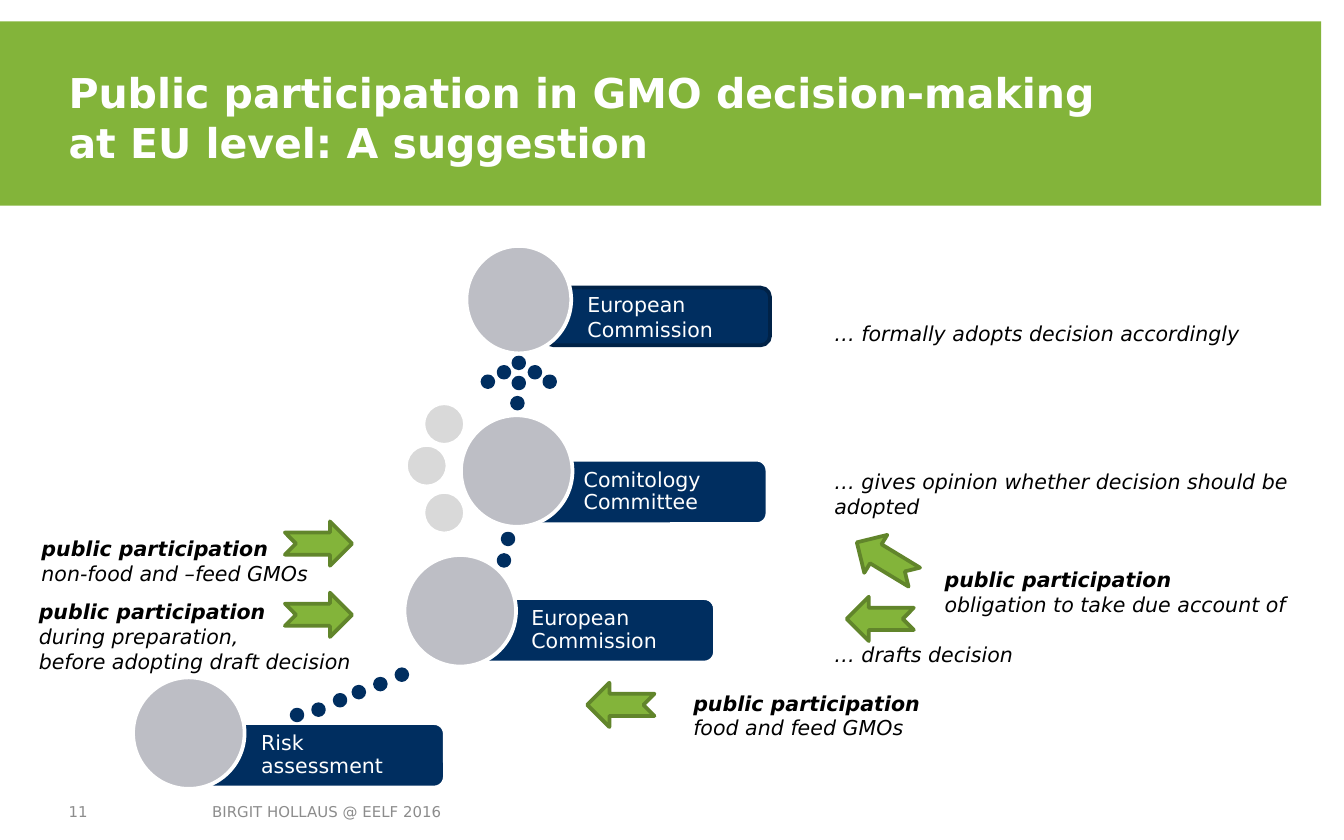
from copy import deepcopy
from dataclasses import dataclass

from pptx import Presentation
from pptx.dml.color import RGBColor
from pptx.enum.shapes import MSO_SHAPE
from pptx.enum.text import MSO_ANCHOR, MSO_AUTO_SIZE, PP_ALIGN
from pptx.oxml.ns import qn
from pptx.util import Pt

PX = 9144
TITLE_ONLY = 5
RECT = MSO_SHAPE.RECTANGLE
ROUND = MSO_SHAPE.ROUNDED_RECTANGLE
OVAL = MSO_SHAPE.OVAL
ARROW = MSO_SHAPE.NOTCHED_RIGHT_ARROW
TOP, MIDDLE = MSO_ANCHOR.TOP, MSO_ANCHOR.MIDDLE
LEFT = PP_ALIGN.LEFT
NO_FIT = MSO_AUTO_SIZE.NONE


@dataclass(frozen=True)
class Theme:
    font: str = "DejaVu Sans"
    green: str = "83B43A"
    dark_green: str = "61852B"
    navy: str = "002E60"
    dark_navy: str = "002247"
    grey: str = "BDBEC5"
    light: str = "D9D9D9"
    muted: str = "8C8C8C"
    white: str = "FFFFFF"
    black: str = "000000"
    title: int = 22
    body: int = 11
    small: int = 8
    line: int = 2


def rgb(value):
    return RGBColor.from_string(value)


def write(tf, lines, *, size, color, font, bold=False, first_bold=False, italic=False,
          anchor=TOP, insets=(10, 5, 10, 5), spacing=None):
    tf.word_wrap = True
    tf.auto_size = NO_FIT
    tf.vertical_anchor = anchor
    tf.margin_left, tf.margin_top, tf.margin_right, tf.margin_bottom = (v * PX for v in insets)
    p = tf.paragraphs[0]
    p.alignment = LEFT
    p.line_spacing = spacing
    for i, line in enumerate(lines):
        if i:
            p.add_line_break()
        r = p.add_run()
        r.text = line
        r.font.name = font
        r.font.size = Pt(size)
        r.font.color.rgb = rgb(color)
        r.font.bold = bold or (first_bold and i == 0)
        r.font.italic = italic
    for br in p._p.findall(qn("a:br")):
        br.insert(0, deepcopy(p.runs[-1]._r.rPr))


class Deck:
    def __init__(self, theme, width, height):
        self.t = theme
        self.prs = Presentation()
        self.prs.slide_width, self.prs.slide_height = width * PX, height * PX
        self.s = None

    def slide(self):
        self.s = self.prs.slides.add_slide(self.prs.slide_layouts[TITLE_ONLY])

    def shape(self, kind, x, y, w, h, fill, line=None):
        sp = self.s.shapes.add_shape(kind, x * PX, y * PX, w * PX, h * PX)
        sp.shadow.inherit = False
        sp.fill.solid()
        sp.fill.fore_color.rgb = rgb(fill)
        if line:
            sp.line.color.rgb = rgb(line)
            sp.line.width = Pt(self.t.line)
        else:
            sp.line.fill.background()
        return sp

    def title(self, x, y, w, h, *lines):
        sp = self.s.shapes.title
        self.s.shapes._spTree.append(sp._element)
        sp.left, sp.top, sp.width, sp.height = (v * PX for v in (x, y, w, h))
        write(sp.text_frame, lines, size=self.t.title, color=self.t.white, font=self.t.font,
              bold=True, anchor=MIDDLE, insets=(0, 0, 0, 0))

    def text(self, x, y, w, h, *lines, **fmt):
        sp = self.s.shapes.add_textbox(x * PX, y * PX, w * PX, h * PX)
        style = {"size": self.t.body, "color": self.t.black, "font": self.t.font}
        write(sp.text_frame, lines, **(style | fmt))

    def note(self, x, y, w, h, line):
        self.text(x, y, w, h, line, italic=True)

    def participation(self, x, y, h, *details):
        self.text(x, y, 291, h, "public participation", *details, first_bold=True, italic=True)

    def footer(self, x, w, line, inset):
        self.text(x, 587, w, 33, line, size=self.t.small, color=self.t.muted,
                  anchor=MIDDLE, insets=(inset, 5, inset, 5))

    def label(self, x, y, w, h, line, *lines, **fmt):
        sp = self.shape(ROUND, x, y, w, h, self.t.navy, line)
        write(sp.text_frame, lines, size=self.t.body, color=self.t.white,
              font=self.t.font, anchor=MIDDLE, **fmt)

    def circle(self, x, y, w, h, fill):
        self.shape(OVAL, x, y, w, h, fill, self.t.white)

    def stage(self, x, y, circle_x, circle_y, *lines):
        self.label(x, y, 179, 48, self.t.white, *lines, insets=(40, 7, 7, 7), spacing=0.9)
        self.circle(circle_x, circle_y, 83, 83, self.t.grey)

    def dots(self, points):
        for x, y in points:
            self.shape(OVAL, x, y, 8, 8, self.t.navy, self.t.navy)

    def arrow(self, x, y, flip=False, rotation=0):
        sp = self.shape(ARROW, x, y, 50, 33, self.t.green, self.t.dark_green)
        sp.rotation = rotation
        if flip:
            sp._element.spPr.xfrm.set("flipH", "1")


def main():
    t = Theme()
    d = Deck(t, 1000, 625)
    d.slide()
    d.shape(RECT, 0, 16, 983, 137, t.green)
    d.title(51, 35, 859, 104, "Public participation in GMO decision-making",
            "at EU level: A suggestion")
    d.footer(148, 352, "BIRGIT HOLLAUS @ EELF 2016", 10)
    d.footer(51, 98, "11", 0)

    d.stage(152, 538, 99, 504, "Risk assessment")
    d.dots([(217, 528), (233, 524), (249, 517), (263, 511), (279, 505), (295, 498)])

    d.stage(353, 445, 301, 413, "European", "Commission")
    d.dots([(371, 413), (374, 397)])

    d.stage(392, 342, 343, 309, "Comitology Committee")
    for x, y in [(315, 300), (302, 331), (315, 366)]:
        d.circle(x, y, 31, 31, t.light)
    d.note(611, 344, 388, 47, "… gives opinion whether decision should be adopted")
    d.dots([(359, 280), (371, 273), (382, 266), (394, 273), (405, 280), (382, 281), (381, 296)])

    d.label(405, 214, 168, 43, t.dark_navy, "European Commission", insets=(30, 5, 10, 5))
    d.circle(347, 183, 78, 80, t.grey)
    d.note(611, 234, 377, 29, "… formally adopts decision accordingly")
    d.note(611, 473, 291, 29, "… drafts decision")

    d.participation(506, 509, 47, "food and feed GMOs")
    d.arrow(437, 508, flip=True)
    d.participation(21, 394, 47, "non-food and –feed GMOs")
    d.arrow(212, 388)
    d.participation(19, 441, 66, "during preparation,", "before adopting draft decision")
    d.arrow(212, 441)
    d.participation(693, 417, 47, "obligation to take due account of")
    d.arrow(634, 400, flip=True, rotation=31.2)
    d.arrow(630, 444, flip=True)
    d.prs.save("out.pptx")


if __name__ == "__main__":
    main()
